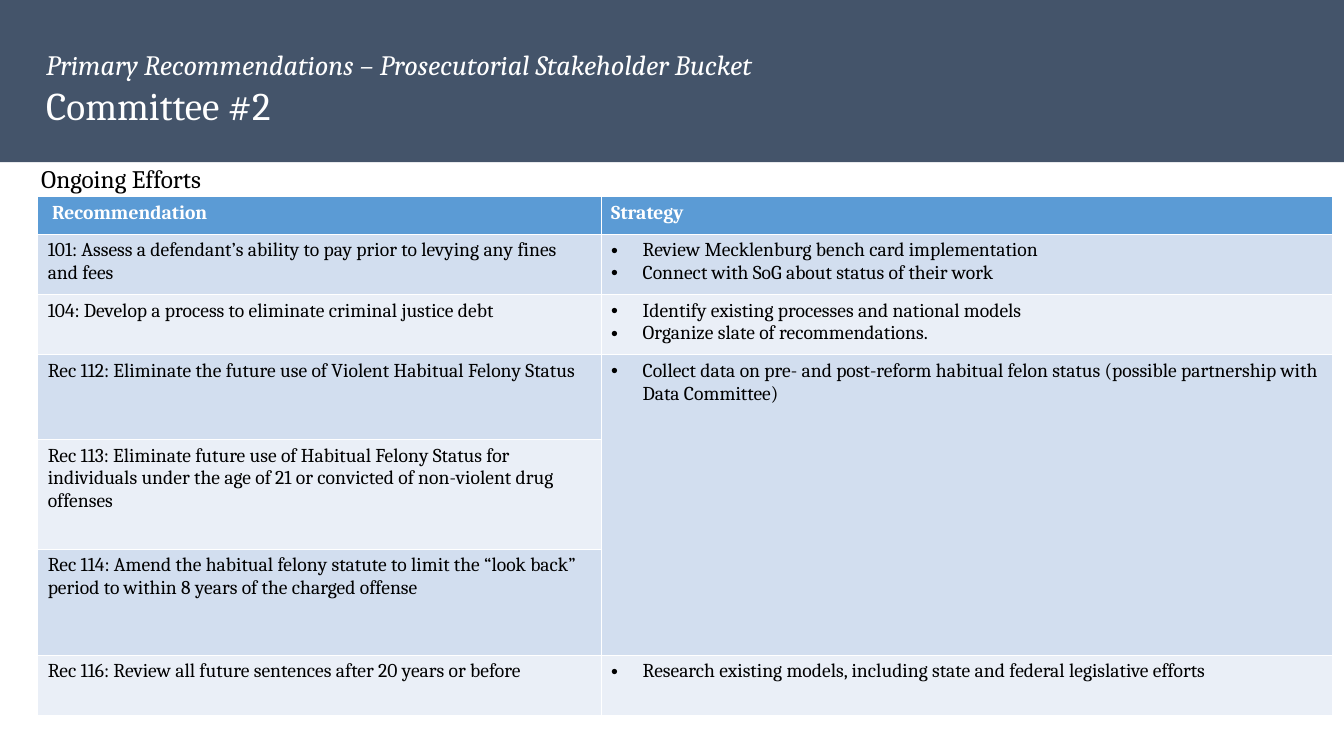
"""Build the Committee #2 slide of ongoing prosecutorial recommendations."""
from dataclasses import dataclass

from lxml.etree import SubElement
from pptx import Presentation
from pptx.dml.color import RGBColor as Rgb
from pptx.enum.shapes import MSO_SHAPE as Preset
from pptx.enum.text import MSO_ANCHOR as Anchor, MSO_AUTO_SIZE as AutoSize, PP_ALIGN as Align
from pptx.oxml.ns import qn
from pptx.slide import Slide
from pptx.table import _Cell as Cell
from pptx.text.text import TextFrame
from pptx.util import Cm, Pt


@dataclass(frozen=True)
class Theme:
    font: str = "Cambria"
    band: Rgb = Rgb(0x44, 0x54, 0x6A)
    header: Rgb = Rgb(0x5B, 0x9B, 0xD5)
    odd_row: Rgb = Rgb(0xD2, 0xDE, 0xEF)
    even_row: Rgb = Rgb(0xEA, 0xEF, 0xF7)
    light: Rgb = Rgb(0xFF, 0xFF, 0xFF)
    dark: Rgb = Rgb(0, 0, 0)
    title_size: int = 28
    kicker_size: int = 20
    section_size: int = 18
    table_size: int = 14


@dataclass(frozen=True)
class Recommendation:
    text: str
    height: float
    strategies: tuple[str, ...] = ()
    rows_covered: int = 1


THEME = Theme()
HEADINGS = (" Recommendation ", "Strategy ")
HEADING_HEIGHT = 0.94
COLUMN_WIDTHS = (14.2, 18.44)
BULLET_INDENT = Cm(0.79)
RECOMMENDATIONS = (
    Recommendation(
        "101: Assess a defendant’s ability to pay prior to levying any fines and fees", 1.52,
        ("Review Mecklenburg bench card implementation",
         "Connect with SoG about status of their work")),
    Recommendation(
        "104: Develop a process to eliminate criminal justice debt ", 1.52,
        ("Identify existing processes and national models",
         "Organize slate of recommendations. ")),
    Recommendation(
        "Rec 112: Eliminate the future use of Violent Habitual Felony Status ", 2.13,
        ("Collect data on pre- and post-reform habitual felon status "
         "(possible partnership with Data Committee)",), rows_covered=3),
    Recommendation(
        "Rec 113: Eliminate future use of Habitual Felony Status for individuals "
        "under the age of 21 or convicted of non-violent drug offenses ", 2.77),
    Recommendation(
        "Rec 114: Amend the habitual felony statute to limit the “look back” period "
        "to within 8 years of the charged offense ", 2.67),
    Recommendation(
        "Rec 116: Review all future sentences after 20 years or before ", 1.52,
        ("Research existing models, including state and federal legislative efforts",)),
)


def write(frame: TextFrame, text: str, *, size: int, color: Rgb = THEME.dark,
          bold: bool = False, italic: bool = False, bullet: bool = False) -> None:
    """Add one formatted paragraph, using the first one while it is empty."""
    first = frame.paragraphs[0]
    paragraph = frame.add_paragraph() if first.runs else first
    paragraph.alignment = Align.LEFT
    run = paragraph.add_run()
    run.text = text
    font = run.font
    font.name, font.size, font.bold, font.italic = THEME.font, Pt(size), bold, italic
    font.color.rgb = color
    if bullet:
        properties = paragraph._p.get_or_add_pPr()
        properties.set("marL", str(BULLET_INDENT))
        properties.set("indent", str(-BULLET_INDENT))
        SubElement(properties, qn("a:buFont")).set("typeface", "Arial")
        SubElement(properties, qn("a:buChar")).set("char", "•")


def fill_cell(cell: Cell, color: Rgb) -> None:
    """Give a cell a solid fill."""
    cell.fill.solid()
    cell.fill.fore_color.rgb = color


def draw_heading(slide: Slide, slide_width: int) -> None:
    """Place the dark band and the title on top of it."""
    title = slide.shapes.title
    band = slide.shapes.add_shape(Preset.RECTANGLE, 0, 0, slide_width, Cm(4.09))
    band.shadow.inherit = False
    band.fill.solid()
    band.fill.fore_color.rgb = THEME.band
    band.line.fill.background()
    title._element.addprevious(band._element)

    title.left, title.top, title.width, title.height = Cm(0.91), Cm(1.07), Cm(20.88), Cm(2.31)
    frame = title.text_frame
    frame.word_wrap = True
    frame.auto_size = AutoSize.NONE
    frame.vertical_anchor = Anchor.TOP
    write(frame, "Primary Recommendations – Prosecutorial Stakeholder Bucket",
          size=THEME.kicker_size, color=THEME.light, italic=True)
    write(frame, "Committee #2", size=THEME.title_size, color=THEME.light)


def draw_table(slide: Slide) -> None:
    """Draw the recommendations beside their strategies."""
    heights = (HEADING_HEIGHT, *(item.height for item in RECOMMENDATIONS))
    table = slide.shapes.add_table(
        len(heights), len(COLUMN_WIDTHS), Cm(0.95), Cm(4.96),
        Cm(sum(COLUMN_WIDTHS)), Cm(sum(heights))).table
    for column, width in zip(table.columns, COLUMN_WIDTHS):
        column.width = Cm(width)
    for row, height in zip(table.rows, heights):
        row.height = Cm(height)

    for column, heading in enumerate(HEADINGS):
        cell = table.cell(0, column)
        fill_cell(cell, THEME.header)
        write(cell.text_frame, heading, size=THEME.table_size, color=THEME.light, bold=True)

    for row, item in enumerate(RECOMMENDATIONS, start=1):
        recommendation, strategy = table.cell(row, 0), table.cell(row, 1)
        for cell in (recommendation, strategy):
            fill_cell(cell, THEME.odd_row if row % 2 else THEME.even_row)
        write(recommendation.text_frame, item.text, size=THEME.table_size)
        for step in item.strategies:
            write(strategy.text_frame, step, size=THEME.table_size, bullet=True)
        if item.rows_covered > 1:
            strategy.merge(table.cell(row + item.rows_covered - 1, 1))


def draw_section_label(slide: Slide) -> None:
    """Label the table with its section name."""
    label = slide.shapes.add_textbox(Cm(0.79), Cm(3.99), Cm(12.19), Cm(1.02))
    label.text_frame.word_wrap = True
    write(label.text_frame, "Ongoing Efforts", size=THEME.section_size)


def main() -> None:
    """Assemble and save the slide."""
    deck = Presentation()
    deck.slide_width, deck.slide_height = Cm(33.87), Cm(19.05)
    slide = deck.slides.add_slide(deck.slide_layouts.get_by_name("Title Only"))
    draw_heading(slide, deck.slide_width)
    draw_table(slide)
    draw_section_label(slide)
    deck.save("out.pptx")


if __name__ == "__main__":
    main()
